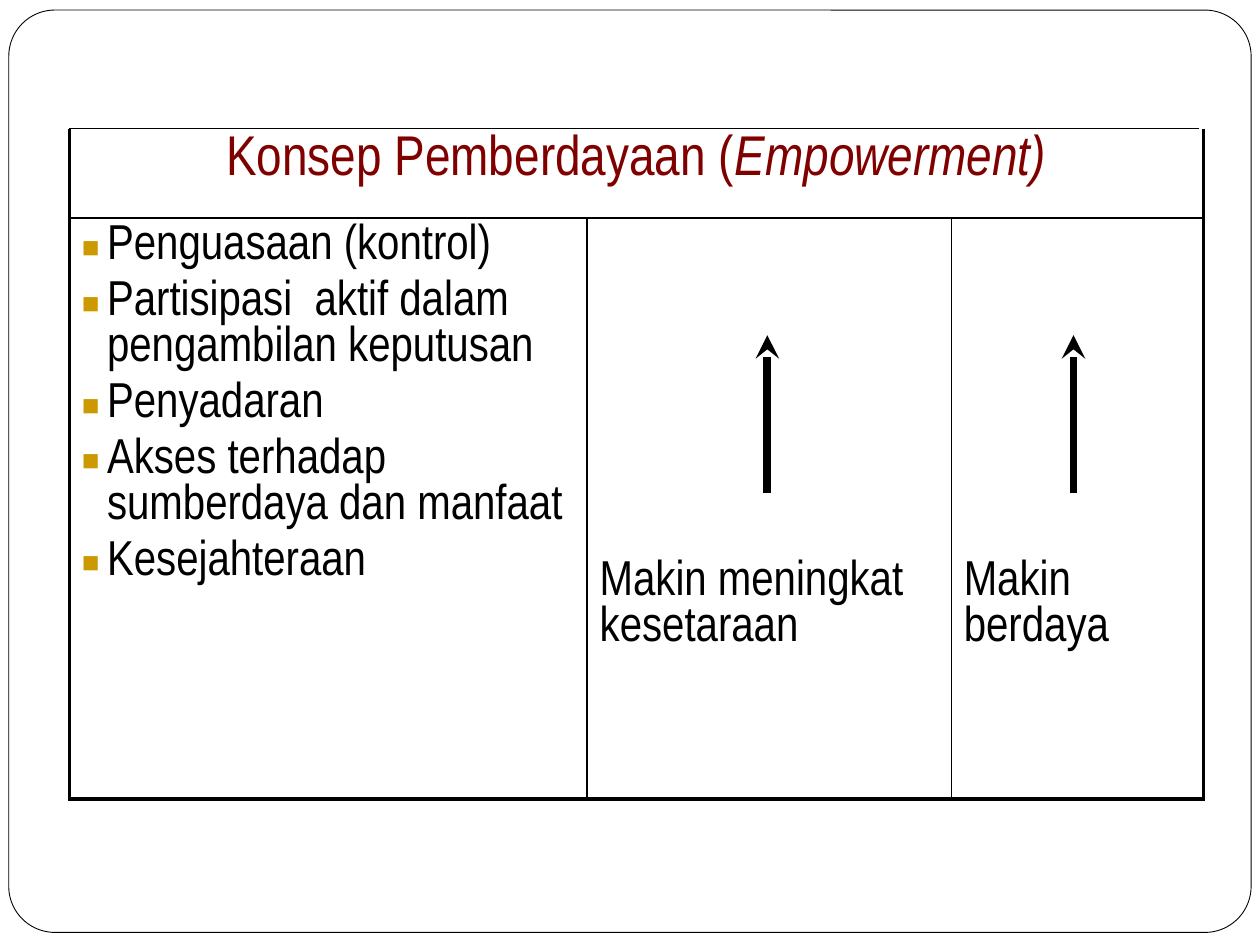
"""Build the slide on the concept of empowerment."""
from dataclasses import dataclass

from lxml import etree
from pptx import Presentation
from pptx import util as u
from pptx.dml.color import RGBColor
from pptx.enum import shapes, text
from pptx.oxml import ns


@dataclass(frozen=True)
class Theme:
    font: str = "Arial Narrow"
    ink: str = "000000"
    paper: str = "FFFFFF"
    title: str = "800000"
    mark: str = "CC9900"
    head: int = 32
    body: int = 28
    thick: float = 2.25
    thin: float = 1
    hair: float = 0.75
    edge: float = 0.5
    bold: float = 4.5


T = Theme()
WIDE, HIGH = 10, 7.5
LEFT, TOP = 0.55, 1.02
COLS = 4.11, 2.89, 2
ROWS = 0.71, 4.61
PLAIN = "{2D5ABB26-0587-4C30-8999-92F81FD0307C}"
POINTS = (
    "Penguasaan (kontrol)",
    "Partisipasi  aktif dalam pengambilan keputusan",
    "Penyadaran",
    "Akses terhadap sumberdaya dan manfaat",
    "Kesejahteraan",
)
TRENDS = "Makin meningkat kesetaraan", "Makin berdaya"


def apply(item, **vals):
    for name, val in vals.items():
        setattr(item, name, val)


def node(base, tag, **vals):
    item = etree.SubElement(base, ns.qn(f"a:{tag}"))
    for name, val in vals.items():
        item.set(name, str(val))
    return item


def write(para, words, size, tint, slant=False):
    run = para.add_run()
    run.text = words
    apply(run.font, name=T.font, size=u.Pt(size), italic=slant)
    run.font.color.rgb = RGBColor.from_string(tint)
    para.space_before = u.Pt(size * 0.2)


def bullet(para):
    props = para._p.get_or_add_pPr()
    props.set("marL", str(u.Inches(0.2)))
    props.set("indent", str(-u.Inches(0.2)))
    node(node(props, "buClr"), "srgbClr", val=T.mark)
    node(props, "buSzPct", val=60000)
    node(props, "buFont", typeface="Arial")
    node(props, "buChar", char="■")


def border(cell, **sides):
    props = cell._tc.get_or_add_tcPr()
    for side in "LRTB":
        line = node(props, f"ln{side}", w=u.Pt(sides[side]))
        if sides[side]:
            node(node(line, "solidFill"), "srgbClr", val=T.ink)
        else:
            node(line, "noFill")
    node(props, "noFill")


def frame(slide):
    box = slide.shapes.add_shape(
        shapes.MSO_SHAPE.ROUNDED_RECTANGLE,
        *map(u.Inches, (0.07, 0.08, 9.86, 7.32)))
    box.shadow.inherit = False
    box.adjustments[0] = 0.05
    box.fill.solid()
    box.fill.fore_color.rgb = RGBColor.from_string(T.paper)
    box.line.color.rgb = RGBColor.from_string(T.ink)
    box.line.width = u.Pt(T.edge)


def rule(slide, start, end, width, arrow=False):
    line = slide.shapes.add_connector(
        shapes.MSO_CONNECTOR.STRAIGHT, *map(u.Inches, start + end))
    line.line.color.rgb = RGBColor.from_string(T.ink)
    line.line.width = u.Pt(width)
    props = line.element.spPr
    if arrow:
        node(props.find(ns.qn("a:ln")), "tailEnd", type="stealth")
    node(props, "effectLst")


def grid(slide):
    area = map(u.Inches, (LEFT, TOP, sum(COLS), sum(ROWS)))
    table = slide.shapes.add_table(len(ROWS), len(COLS), *area).table
    apply(table, first_row=False, horz_banding=False)
    table._tbl.tblPr.find(ns.qn("a:tableStyleId")).text = PLAIN
    for col, size in zip(table.columns, COLS):
        col.width = u.Inches(size)
    for row, size in zip(table.rows, ROWS):
        row.height = u.Inches(size)
    last = len(COLS) - 1
    for y in range(len(ROWS)):
        for x in range(len(COLS)):
            border(table.cell(y, x),
                   L=T.thin if x else T.thick,
                   R=T.thick if x == last or not y else T.thin,
                   T=T.thin if y else 0,
                   B=T.thick if y else T.thin)
    table.cell(0, 0).merge(table.cell(0, last))
    return table


def fill(table):
    para = table.cell(0, 0).text_frame.paragraphs[0]
    para.alignment = text.PP_ALIGN.CENTER
    write(para, "Konsep Pemberdayaan (", T.head, T.title)
    write(para, "Empowerment)", T.head, T.title, True)
    body = table.cell(1, 0).text_frame
    for i, words in enumerate(POINTS):
        para = body.add_paragraph() if i else body.paragraphs[0]
        write(para, words, T.body, T.ink)
        bullet(para)
    for x, words in enumerate(TRENDS, 1):
        cell = table.cell(1, x)
        cell.margin_top = u.Inches(2.71)
        write(cell.text_frame.paragraphs[0], words, T.body, T.ink)


def main():
    deck = Presentation()
    apply(deck, slide_width=u.Inches(WIDE), slide_height=u.Inches(HIGH))
    slide = deck.slides.add_slide(deck.slide_layouts[6])
    frame(slide)
    fill(grid(slide))
    for x in (6.09, 8.52):
        rule(slide, (x, 3.91), (x, 2.66), T.bold, True)
    rule(slide, (LEFT, TOP), (9.52, TOP), T.hair)
    deck.save("out.pptx")


if __name__ == "__main__":
    main()
